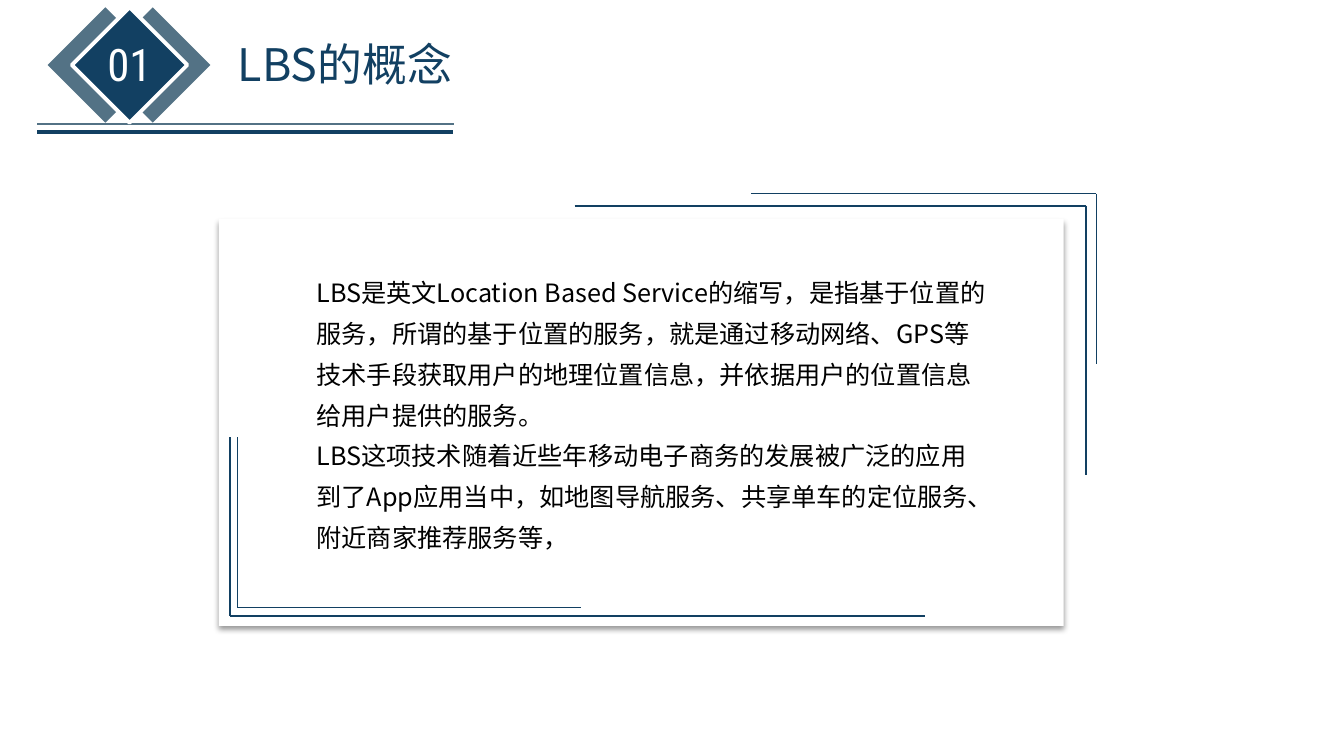
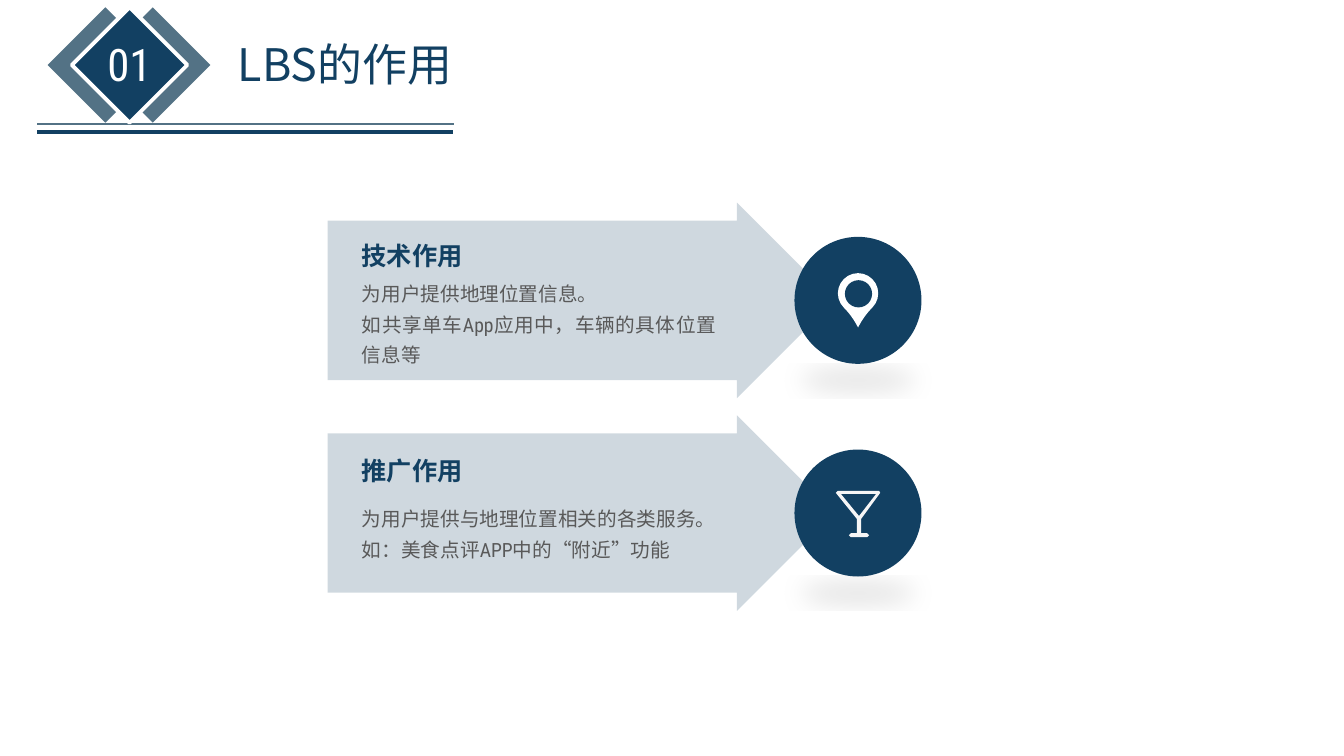
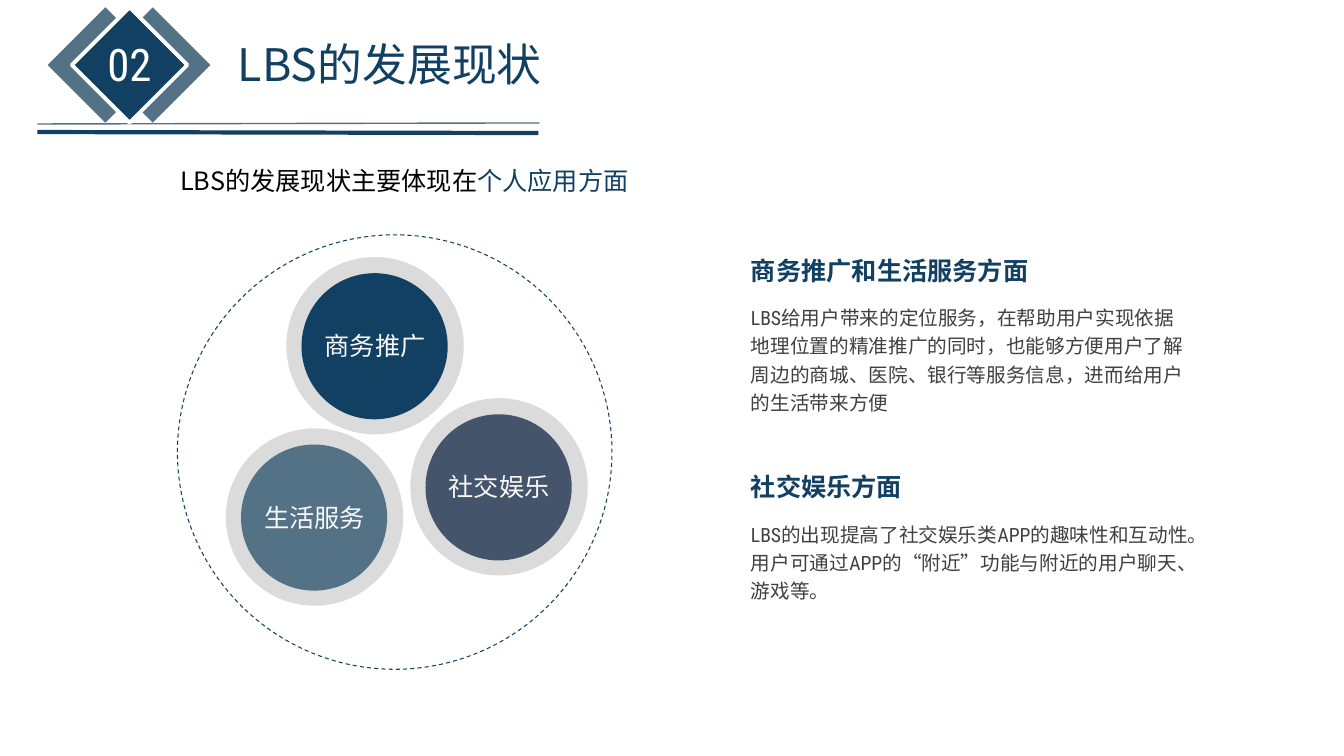
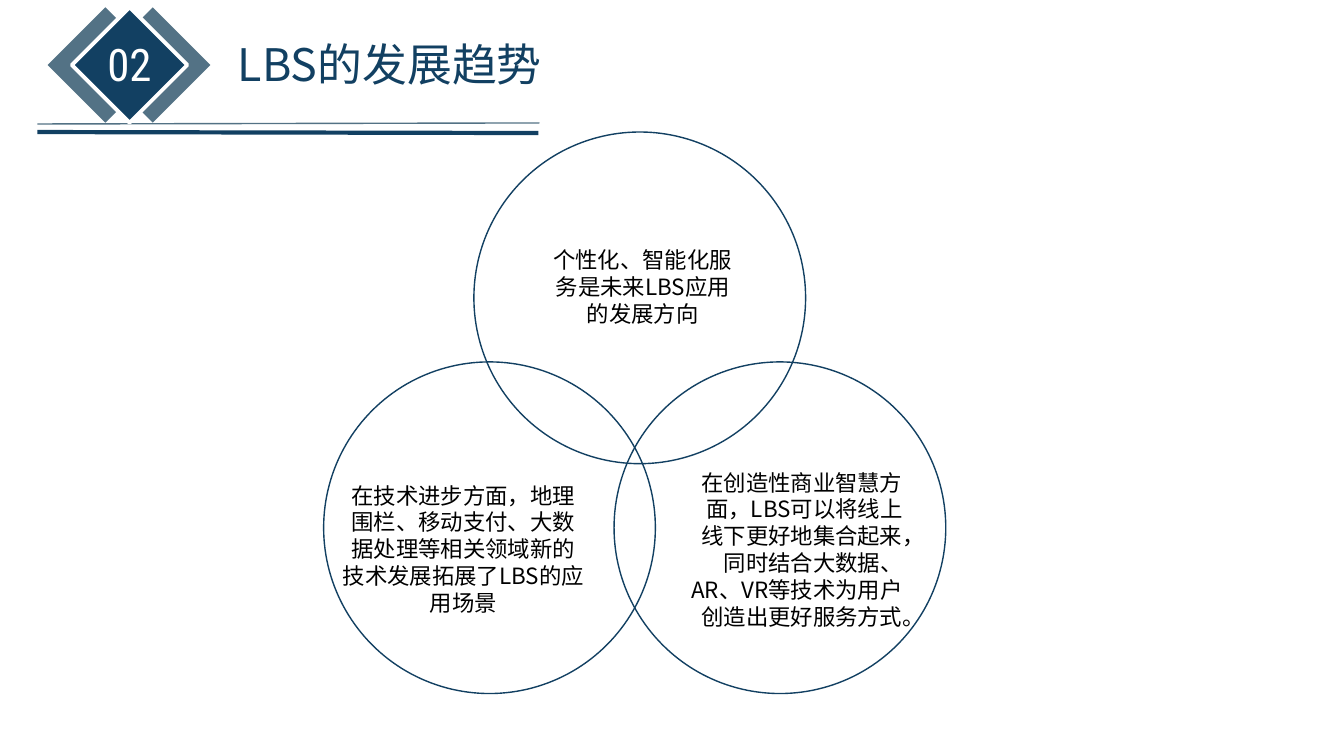
from lxml import etree
from pptx import Presentation
from pptx.dml.color import RGBColor
from pptx.enum.dml import MSO_LINE
from pptx.enum.lang import MSO_LANGUAGE_ID
from pptx.enum.shapes import MSO_CONNECTOR, MSO_SHAPE
from pptx.enum.text import MSO_ANCHOR, MSO_AUTO_SIZE, PP_ALIGN
from pptx.oxml.ns import qn
from pptx.util import Pt

PX = 9144  # EMU in one px, 100 px to the inch
STRAIGHT = MSO_CONNECTOR.STRAIGHT
RECTANGLE, OVAL = MSO_SHAPE.RECTANGLE, MSO_SHAPE.OVAL
ARROW, TEARDROP = MSO_SHAPE.RIGHT_ARROW, MSO_SHAPE.TEAR
DASH = MSO_LINE.DASH
CENTER, RIGHT, JUSTIFY = PP_ALIGN.CENTER, PP_ALIGN.RIGHT, PP_ALIGN.JUSTIFY
TOP, MIDDLE = MSO_ANCHOR.TOP, MSO_ANCHOR.MIDDLE
FIT = MSO_AUTO_SIZE.SHAPE_TO_FIT_TEXT
CHINESE = MSO_LANGUAGE_ID.SIMPLIFIED_CHINESE

NAVY, STEEL, SLATE = "124062", "537285", "44546A"
WHITE, BLACK, RING = "FFFFFF", "000000", "DBDBDB"
LABEL, ICON, GREY, DARK_GREY = "F8F8F8", "F6F6F6", "595959", "404040"
SANS, CONDENSED = "Noto Sans CJK SC", "Roboto Condensed"

CARD_SHADOW = {"blurRad": 4 * 12700, "dist": 3 * 12700, "dir": 5400000,
               "algn": "t", "rotWithShape": 0}
FLOOR_SHADOW = {"blurRad": 18 * 12700, "dist": 3 * 12700, "dir": 5400000,
                "sx": 90000, "sy": -19000, "rotWithShape": 0}


def add_shape(slide, kind, box, fill=None, line=None, weight=1, alpha=None,
              shadow=None, shadow_alpha=0):
    """Add a preset shape, or a straight line whose box is x1, y1, x2, y2."""
    lengths = [value * PX for value in box]
    if kind is STRAIGHT:
        shape = slide.shapes.add_connector(kind, *lengths)
    else:
        shape = slide.shapes.add_shape(kind, *lengths)
        if fill:
            shape.fill.solid()
            shape.fill.fore_color.rgb = RGBColor.from_string(fill)
        else:
            shape.fill.background()
    if line:
        shape.line.color.rgb = RGBColor.from_string(line)
        shape.line.width = Pt(weight)
    else:
        shape.line.fill.background()
    properties = shape._element.spPr
    if alpha:
        color = properties.find(qn("a:solidFill"))[0]
        etree.SubElement(color, qn("a:alpha"), val=str(alpha * 1000))
    effects = etree.SubElement(properties, qn("a:effectLst"))
    if shadow:
        outer = etree.SubElement(effects, qn("a:outerShdw"),
                                 {key: str(value) for key, value in shadow.items()})
        color = etree.SubElement(outer, qn("a:srgbClr"), val=BLACK)
        etree.SubElement(color, qn("a:alpha"), val=str(shadow_alpha * 1000))
    return shape


def add_text(slide, box, paragraphs, size, color, font=SANS, bold=None,
             align=None, spacing=None, wrap=True, anchor=TOP):
    """Add a text box; a paragraph is a string or a list of (text, colour)."""
    text_box = slide.shapes.add_textbox(*[value * PX for value in box])
    frame = text_box.text_frame
    frame_format = {"word_wrap": wrap, "auto_size": FIT, "vertical_anchor": anchor}
    for name, value in frame_format.items():
        setattr(frame, name, value)
    for index, content in enumerate(paragraphs):
        paragraph = frame.add_paragraph() if index else frame.paragraphs[0]
        paragraph.alignment = align
        paragraph.line_spacing = spacing
        parts = [(content, color)] if isinstance(content, str) else content
        for text, run_color in parts:
            run = paragraph.add_run()
            run.text = text
            run_format = {"size": Pt(size), "bold": bold, "name": font,
                          "language_id": CHINESE}
            for name, value in run_format.items():
                setattr(run.font, name, value)
            run.font.color.rgb = RGBColor.from_string(run_color)
            etree.SubElement(run._r.rPr, qn("a:ea"), typeface=SANS)


presentation = Presentation()
presentation.slide_width = 1333 * PX
presentation.slide_height = 750 * PX

# Shared header: number badge, title and double rule
headers = [
    ("01", "LBS的概念", 450, 123, 131),
    ("01", "LBS的作用", 450, 123, 131),
    ("02", "LBS的发展现状", 535, 122, 132),
    ("02", "LBS的发展趋势", 535, 122, 132),
]
slides = []
for number, title, rule_end, thin_y, thick_y in headers:
    slide = presentation.slides.add_slide(presentation.slide_layouts[6])
    slides.append(slide)
    add_shape(slide, STRAIGHT, (rule_end, thin_y, 37, 123), line=STEEL)
    for left, fill, outline in [(111, STEEL, None), (64, STEEL, None), (88, NAVY, WHITE)]:
        diamond = add_shape(slide, RECTANGLE, (left, 24, 81, 81), fill, outline, 2.75)
        diamond.rotation = 45
    add_text(slide, (95, 32, 67, 64), [number], 32, WHITE, CONDENSED, align=CENTER)
    add_shape(slide, STRAIGHT, (rule_end - 1, thick_y, 37, 131), line=NAVY, weight=3)
    add_text(slide, (226, 32, 444, 64), [title], 32, NAVY)
concept, role, status, trend = slides

# Concept: card with corner lines
add_shape(concept, RECTANGLE, (217, 217, 838, 404), WHITE,
          shadow=CARD_SHADOW, shadow_alpha=40)
corner_lines = [
    (570, 204, 1077, 204, 1.5), (1077, 204, 1077, 471, 1.5),
    (745, 192, 1087, 192, 0.5), (1087, 192, 1087, 361, 0.5),
    (917, 611, 228, 611, 1.5), (228, 611, 228, 434, 1.5),
    (576, 603, 235, 603, 0.5), (235, 603, 235, 434, 0.5),
]
for *ends, weight in corner_lines:
    add_shape(concept, STRAIGHT, ends, line=NAVY, weight=weight)
add_text(concept, (304, 260, 685, 296), [
    "LBS是英文Location Based Service的缩写，是指基于位置的服务，所谓的基于位置的服务，"
    "就是通过移动网络、GPS等技术手段获取用户的地理位置信息，并依据用户的位置信息给用户提供的服务。",
    "LBS这项技术随着近些年移动电子商务的发展被广泛的应用到了App应用当中，"
    "如地图导航服务、共享单车的定位服务、附近商家推荐服务等，",
], 18, BLACK, spacing=1.35)

# Role: two arrows, each ending in an icon disc
roles = [
    (201, "技术作用", 233, 268, 102,
     ["为用户提供地理位置信息。", "如共享单车App应用中，车辆的具体位置信息等"]),
    (412, "推广作用", 447, 491, 71,
     ["为用户提供与地理位置相关的各类服务。", "如：美食点评APP中的“附近”功能"]),
]
for top, heading, heading_top, body_top, body_height, body in roles:
    arrow = add_shape(role, ARROW, (325, top, 503, 194), NAVY, alpha=20)
    arrow.adjustments[0] = 0.815
    add_shape(role, OVAL, (788, top + 34, 126, 126), NAVY,
              shadow=FLOOR_SHADOW, shadow_alpha=10)
    add_text(role, (349, heading_top, 120, 40), [heading], 18, NAVY, CONDENSED,
             bold=True, wrap=False, anchor=MIDDLE)
    add_text(role, (349, body_top, 371, body_height), body, 14, GREY, CONDENSED,
             align=JUSTIFY, spacing=1.3)

pin = add_shape(role, TEARDROP, (831, 271, 40, 40), WHITE)
pin.adjustments[0] = 1.2
pin.rotation = 135
add_shape(role, OVAL, (838, 278, 27, 27), NAVY)

glass_outline = [(872, 487), (873, 489), (854, 515), (854, 529), (860, 529), (862, 531),
                 (860, 533), (844, 533), (842, 531), (844, 529), (850, 529), (850, 515),
                 (829, 489)]
glass_bowl = [(834, 490), (869, 490)]
builder = role.shapes.build_freeform(831, 487, scale=PX)
builder.add_line_segments(glass_outline, close=True)
builder.move_to(852, 512)
builder.add_line_segments(glass_bowl, close=True)
glass = builder.convert_to_shape()
glass.shadow.inherit = False
glass.fill.solid()
glass.fill.fore_color.rgb = RGBColor.from_string(ICON)
glass.line.fill.background()

# Status: three discs in a dashed circle, two text blocks
orbit = add_shape(status, OVAL, (176, 233, 431, 431), line=NAVY, weight=0.75)
orbit.line.dash_style = DASH
discs = [("生活服务", 224, 425, STEEL), ("社交娱乐", 407, 395, SLATE),
         ("商务推广", 284, 255, NAVY)]
for label, left, top, fill in discs:
    add_shape(status, OVAL, (left, top, 176, 176), RING)
    add_shape(status, OVAL, (left + 15, top + 16, 145, 145), fill)
    add_text(status, (left + 28, top + 68, 120, 40), [label], 18, LABEL,
             align=CENTER, wrap=False)
add_text(status, (169, 159, 471, 40),
         [[("LBS的发展现状主要体现在", BLACK), ("个人应用方面", NAVY)]], 18, BLACK)
aspects = [
    (248, 295, 123, "商务推广和生活服务方面",
     "LBS给用户带来的定位服务，在帮助用户实现依据地理位置的精准推广的同时，"
     "也能够方便用户了解周边的商城、医院、银行等服务信息，进而给用户的生活带来方便"),
    (463, 170, 95, "社交娱乐方面",
     "LBS的出现提高了社交娱乐类APP的趣味性和互动性。"
     "用户可通过APP的“附近”功能与附近的用户聊天、游戏等。"),
]
for top, heading_width, body_height, heading, body in aspects:
    add_text(status, (735, top, heading_width, 40), [heading], 18, NAVY, CONDENSED,
             bold=True, wrap=False)
    add_text(status, (735, top + 46, 456, body_height), [body], 14, DARK_GREY,
             CONDENSED, spacing=1.2)

# Trend: three overlapping circles
trends = [
    (470, 131, (534, 239, 207, 91), CENTER, "个性化、智能化服务是未来LBS应用的发展方向"),
    (321, 359, (330, 473, 259, 145), CENTER,
     "在技术进步方面，地理围栏、移动支付、大数据处理等相关领域新的技术发展拓展了LBS的应用场景"),
    (609, 359, (669, 460, 236, 172), RIGHT,
     "在创造性商业智慧方面，LBS可以将线上线下更好地集合起来，"
     "同时结合大数据、AR、VR等技术为用户创造出更好服务方式。"),
]
for left, top, text_area, align, text in trends:
    add_shape(trend, OVAL, (left, top, 329, 329), line=NAVY)
    add_text(trend, text_area, [text], 16, BLACK, align=align)

presentation.save("out.pptx")
